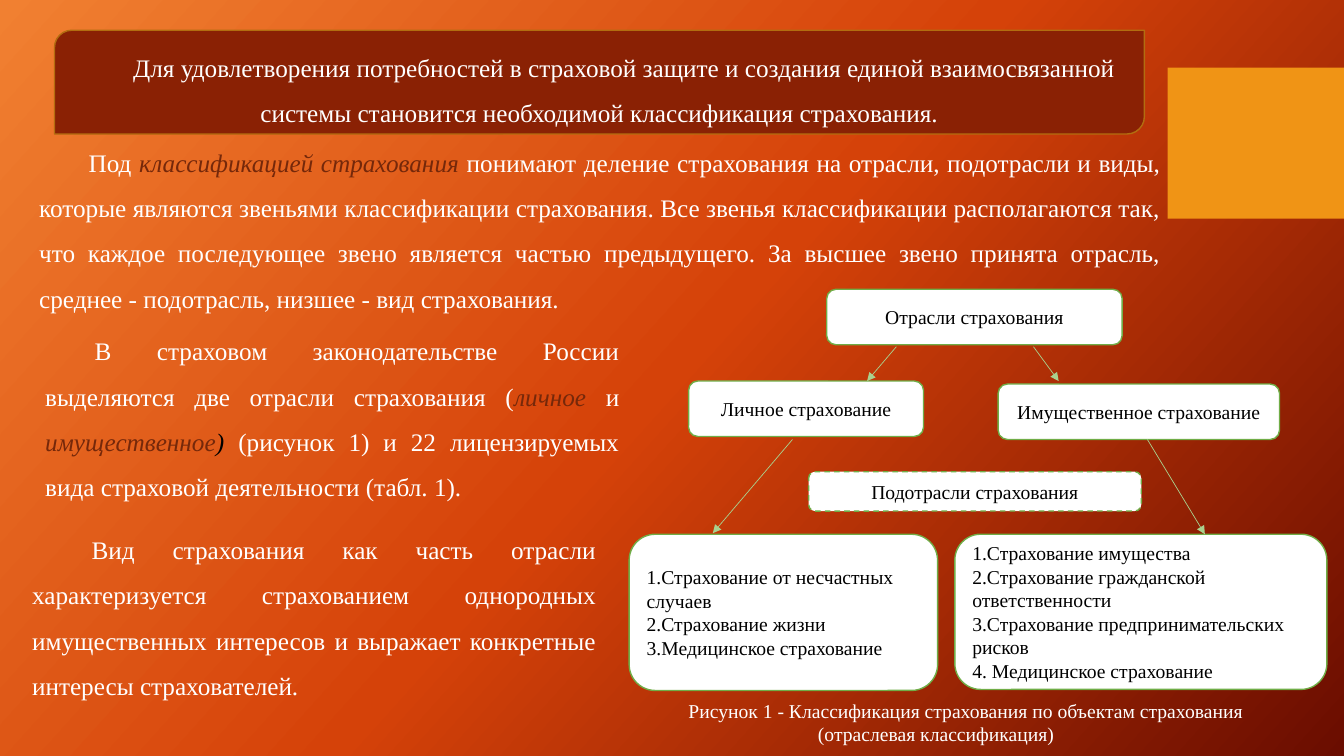
import copy

import lxml.etree
import pptx
import pptx.dml.color
import pptx.enum.dml
import pptx.enum.shapes
import pptx.enum.text
import pptx.oxml.ns
import pptx.util

Inches = pptx.util.Inches
Pt = pptx.util.Pt
SHAPE = pptx.enum.shapes.MSO_SHAPE
ALIGN = pptx.enum.text.PP_ALIGN
ANCHOR = pptx.enum.text.MSO_ANCHOR

THEME = {
    "font": "Times New Roman",
    "body_size": 18,
    "label_size": 14,
    "gradient": [(0, "F18031"), (0.5, "D54209"), (1, "6A0D00")],
    "gradient_angle": 42,
    "accent": "F09415",
    "banner": "8A2104",
    "banner_line": "B26D10",
    "light": "FFFFFF",
    "dark": "000000",
    "term": "75280A",
    "box_line": "70AD47",
    "arrow": "A9D18E",
}

ACCENT_BLOCK = (11.58, 0.67, 1.75, 1.5)
BANNER = (
    (0.54, 0.3, 10.81, 1.03),
    "Для удовлетворения потребностей в страховой защите и создания единой взаимосвязанной "
    "системы становится необходимой классификация страхования.",
)

PASSAGES = [
    ((0.29, 1.26, 11.32, 1.86), 0.49, [
        ("Под ", "light"),
        ("классификацией страхования ", "term"),
        ("понимают деление страхования на отрасли, подотрасли и виды, которые являются звеньями "
         "классификации страхования. Все звенья классификации располагаются так, что каждое "
         "последующее звено является частью предыдущего. За высшее звено принята отрасль, "
         "среднее - подотрасль, низшее - вид страхования.", "light"),
    ]),
    ((0.35, 3.13, 5.89, 1.86), 0.49, [
        ("В страховом законодательстве России выделяются две отрасли страхования (", "light"),
        ("личное", "term"),
        (" и ", "light"),
        ("имущественное", "term"),
        (")", "dark"),
        (" (рисунок 1) и 22 лицензируемых вида страховой деятельности (табл. 1).", "light"),
    ]),
    ((0.22, 5.1, 5.79, 1.86), 0.59, [
        ("Вид страхования как часть отрасли характеризуется страхованием однородных "
         "имущественных интересов и выражает конкретные интересы страхователей.", "light"),
    ]),
]

CAPTION = (
    (5.95, 6.88, 6.67, 0.57),
    "Рисунок 1 - Классификация страхования по объектам страхования (отраслевая классификация)",
)

LABEL_BOXES = [
    ((8.2, 2.87, 2.93, 0.55), "Отрасли страхования", False),
    ((6.83, 3.78, 2.33, 0.55), "Личное страхование", False),
    ((9.9, 3.81, 2.79, 0.55), "Имущественное страхование", False),
    ((8.02, 4.68, 3.3, 0.39), "Подотрасли страхования", True),
]

LIST_BOXES = [
    ((6.24, 5.3, 3.06, 1.55), [
        "Страхование от несчастных случаев",
        "Страхование жизни",
        "Медицинское страхование",
    ]),
    ((9.47, 5.3, 3.69, 1.54), [
        "Страхование имущества",
        "Страхование гражданской ответственности",
        "Страхование предпринимательских рисков",
        " Медицинское страхование",
    ]),
]

ARROWS = [
    ((8.89, 3.44), (8.6, 3.78)),
    ((10.25, 3.44), (10.5, 3.78)),
    ((7.86, 4.36), (7.07, 5.29)),
    ((11.38, 4.36), (11.95, 5.3)),
]


def color(name):
    return pptx.dml.color.RGBColor.from_string(THEME[name])


def add_xml(parent, tag, **attributes):
    lxml.etree.SubElement(parent, pptx.oxml.ns.qn(tag), attributes)


def paint_background(page):
    fill = page.background.fill
    fill.gradient()
    fill.gradient_angle = 360 - THEME["gradient_angle"]
    stop_list = page.element.find(".//" + pptx.oxml.ns.qn("a:gsLst"))
    stop_list.append(copy.deepcopy(stop_list[0]))
    for stop, (position, code) in zip(fill.gradient_stops, THEME["gradient"]):
        stop.position = position
        stop.color.rgb = pptx.dml.color.RGBColor.from_string(code)


def add_box(page, kind, place, fill, line=None):
    box = page.shapes.add_shape(kind, *map(Inches, place))
    box.shadow.inherit = False
    box.fill.solid()
    box.fill.fore_color.rgb = color(fill)
    if line:
        box.line.color.rgb = color(line)
        box.line.width = Pt(1)
    else:
        box.line.fill.background()
    box.text_frame.word_wrap = True
    box.text_frame.vertical_anchor = ANCHOR.MIDDLE
    return box


def add_text_box(page, place):
    box = page.shapes.add_textbox(*map(Inches, place))
    box.text_frame.word_wrap = True
    box.text_frame.auto_size = pptx.enum.text.MSO_AUTO_SIZE.SHAPE_TO_FIT_TEXT
    return box


def format_span(span, size, ink):
    span.font.name = THEME["font"]
    span.font.size = Pt(THEME[size])
    span.font.color.rgb = color(ink)


def format_para(para, alignment, size, ink, indent=0, spacing=None):
    para.alignment = alignment
    properties = para._p.get_or_add_pPr()
    properties.set("marL", "0")
    properties.set("indent", str(int(Inches(indent))))
    if spacing:
        para.line_spacing = spacing
    for span in para.runs:
        format_span(span, size, ink)


def add_passage(page, place, indent, pieces):
    para = add_text_box(page, place).text_frame.paragraphs[0]
    format_para(para, ALIGN.JUSTIFY, "body_size", "light", indent, 1.5)
    for words, ink in pieces:
        span = para.add_run()
        span.text = words
        format_span(span, "body_size", ink)
        span.font.italic = ink != "light"


def add_label_box(page, place, words, dashed):
    box = add_box(page, SHAPE.ROUNDED_RECTANGLE, place, "light", "box_line")
    if dashed:
        box.line.dash_style = pptx.enum.dml.MSO_LINE.DASH
    box.text_frame.text = words
    format_para(box.text_frame.paragraphs[0], ALIGN.CENTER, "label_size", "dark")


def add_list_box(page, place, items):
    box = add_box(page, SHAPE.ROUNDED_RECTANGLE, place, "light", "box_line")
    box.text_frame.text = "\n".join(items)
    for para in box.text_frame.paragraphs:
        add_xml(para._p.get_or_add_pPr(), "a:buAutoNum", type="arabicPeriod")
        format_para(para, ALIGN.LEFT, "label_size", "dark")


def add_arrow(page, start, end):
    arrow = page.shapes.add_connector(
        pptx.enum.shapes.MSO_CONNECTOR.STRAIGHT, *map(Inches, start + end))
    arrow.line.color.rgb = color("arrow")
    arrow.line.width = Pt(0.5)
    add_xml(arrow.line._get_or_add_ln(), "a:tailEnd", type="triangle")
    add_xml(arrow._element.spPr, "a:effectLst")


def main():
    deck = pptx.Presentation()
    deck.slide_width, deck.slide_height = Inches(13.33), Inches(7.5)
    page = deck.slides.add_slide(deck.slide_layouts[6])
    paint_background(page)
    add_box(page, SHAPE.RECTANGLE, ACCENT_BLOCK, "accent")
    place, words = BANNER
    banner = add_box(page, SHAPE.ROUND_2_DIAG_RECTANGLE, place, "banner", "banner_line")
    banner.text_frame.text = words
    format_para(banner.text_frame.paragraphs[0], ALIGN.CENTER, "body_size", "light", 0.49, 1.5)
    for add_part, parts in ((add_passage, PASSAGES), (add_label_box, LABEL_BOXES),
                            (add_list_box, LIST_BOXES), (add_arrow, ARROWS)):
        for part in parts:
            add_part(page, *part)
    place, words = CAPTION
    caption = add_text_box(page, place)
    caption.text_frame.text = words
    format_para(caption.text_frame.paragraphs[0], ALIGN.CENTER, "label_size", "light", 0.59)
    deck.save("out.pptx")


if __name__ == "__main__":
    main()
